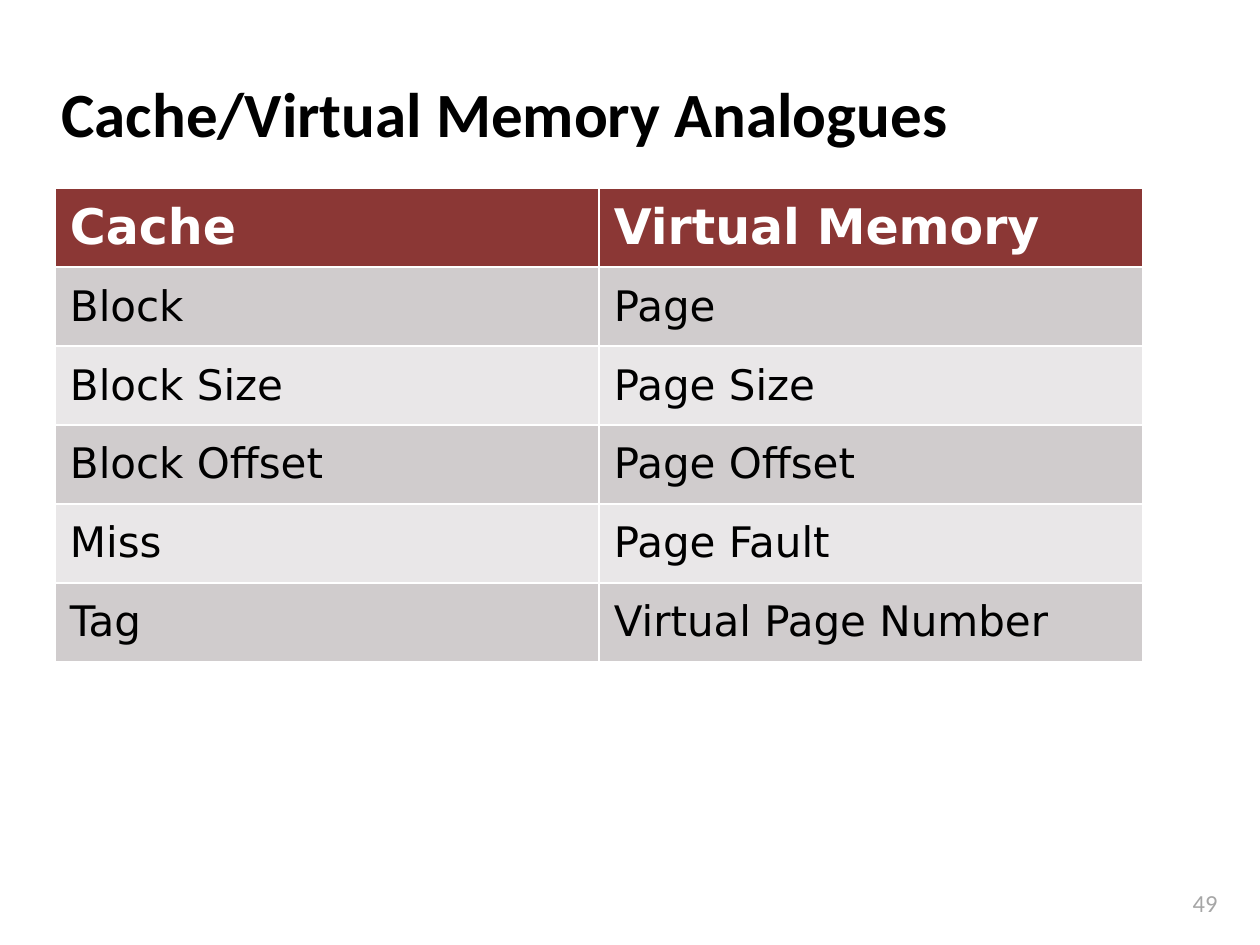
from pptx import Presentation
from pptx.dml.color import RGBColor
from pptx.enum.text import MSO_ANCHOR, PP_ALIGN
from pptx.util import Emu, Pt

MIDDLE = MSO_ANCHOR.MIDDLE
LEFT, RIGHT = PP_ALIGN.LEFT, PP_ALIGN.RIGHT
TITLE_ONLY = 5
EMU_PER_PX = 914400 // 126
COLORS = {
    "text": "000000",
    "header_text": "FFFFFF",
    "header": "8B3735",
    "odd_row": "D0CCCD",
    "even_row": "E9E7E8",
    "number": "A6A6A6",
}
ANALOGUES = [
    ("Cache", "Virtual Memory"),
    ("Block", "Page"),
    ("Block Size", "Page Size"),
    ("Block Offset", "Page Offset"),
    ("Miss", "Page Fault"),
    ("Tag", "Virtual Page Number"),
]


def px(length):
    return Emu(length * EMU_PER_PX)


class SlideBuilder:
    heading_font = "Calibri"
    table_font = "DejaVu Sans"

    def __init__(self, deck):
        self.slide = deck.slides.add_slide(deck.slide_layouts[TITLE_ONLY])

    def color(self, name):
        return RGBColor.from_string(COLORS[name])

    def add_text(self, frame, text, font, size, color, bold=False, align=LEFT):
        paragraph = frame.paragraphs[0]
        paragraph.alignment = align
        run = paragraph.add_run()
        run.text = text
        run.font.name = font
        run.font.size = Pt(size)
        run.font.bold = bold
        run.font.color.rgb = self.color(color)

    def title(self, text, left, top, width, height):
        heading = self.slide.shapes.title
        heading.left, heading.top = px(left), px(top)
        heading.width, heading.height = px(width), px(height)
        heading.text_frame.vertical_anchor = MIDDLE
        self.add_text(heading.text_frame, text, self.heading_font, 36, "text", bold=True)

    def page_number(self, text, left, top, width, height):
        number = self.slide.shapes.add_textbox(px(left), px(top), px(width), px(height))
        number.text_frame.word_wrap = True
        self.add_text(number.text_frame, text, self.heading_font, 14, "number", align=RIGHT)

    def table(self, rows, left, top, column_width, row_height):
        columns = len(rows[0])
        grid = self.slide.shapes.add_table(
            len(rows), columns, px(left), px(top),
            px(column_width * columns), px(row_height * len(rows)),
        ).table
        for row_index, row in enumerate(rows):
            for column_index, term in enumerate(row):
                self.cell(grid.cell(row_index, column_index), term, row_index)

    def cell(self, cell, term, row_index):
        is_header = row_index == 0
        band = "header" if is_header else "odd_row" if row_index % 2 else "even_row"
        cell.fill.solid()
        cell.fill.fore_color.rgb = self.color(band)
        cell.vertical_anchor = MIDDLE
        cell.margin_left = cell.margin_right = px(15)
        cell.margin_top = cell.margin_bottom = px(6)
        self.add_text(
            cell.text_frame, term, self.table_font, 28 if is_header else 24,
            "header_text" if is_header else "text", bold=is_header,
        )


def main():
    deck = Presentation()
    deck.slide_width, deck.slide_height = px(1260), px(945)
    builder = SlideBuilder(deck)
    builder.page_number("49", 1134, 882, 96, 43)
    builder.title("Cache/Virtual Memory Analogues", 49, 60, 1046, 105)
    builder.table(ANALOGUES, 55, 188, 544, 79)
    deck.save("out.pptx")


if __name__ == "__main__":
    main()
